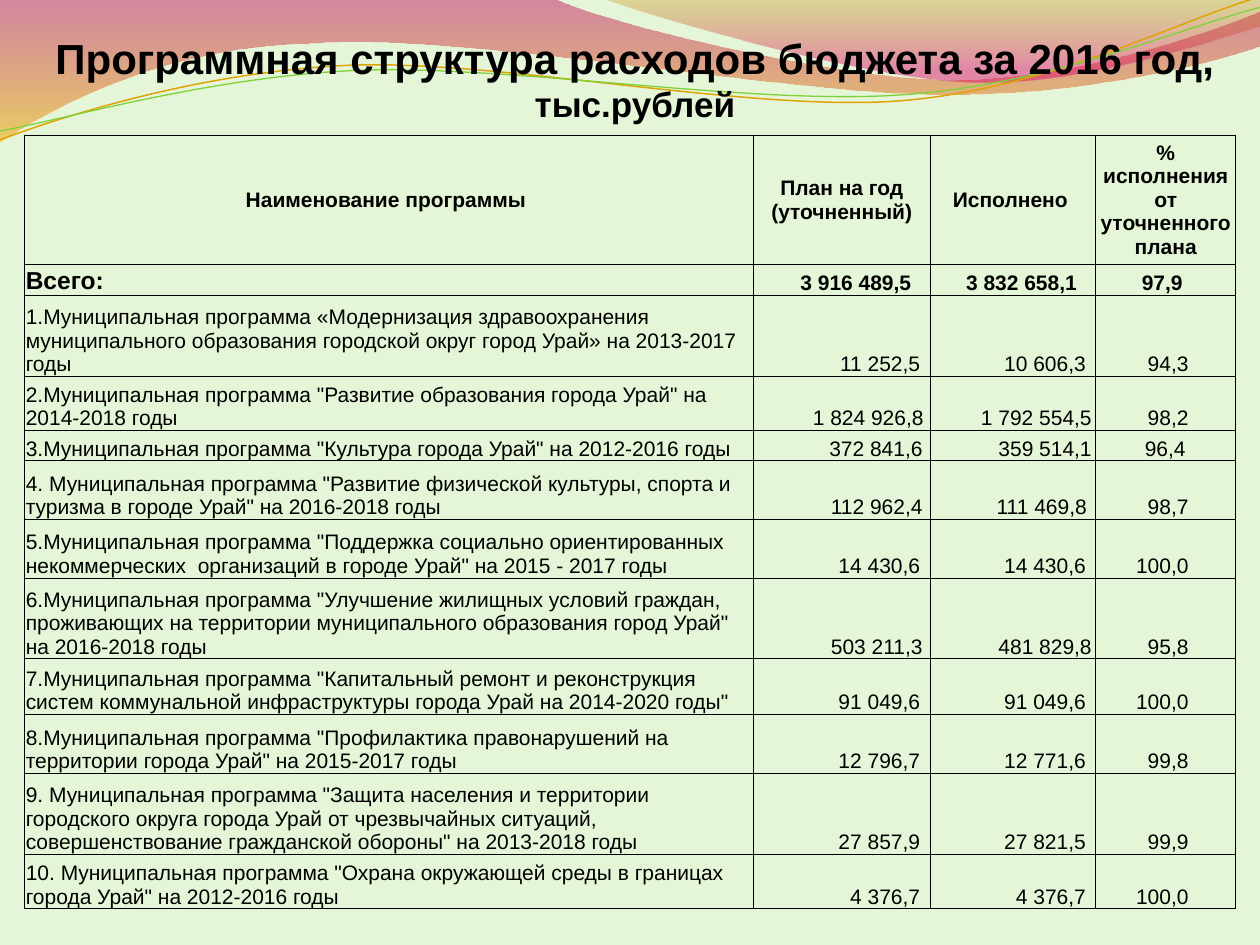
from lxml import etree
from pptx import Presentation
from pptx import util as u
from pptx.dml.color import RGBColor
from pptx.enum import text as t
from pptx.oxml import ns

BACK = RGBColor(0xE5, 0xF6, 0xD8)
BLACK = RGBColor(0, 0, 0)
CRIMSON = RGBColor(0xBD, 0x00, 0x59)
AMBER = RGBColor(0xF0, 0xAB, 0x00)
OCHRE = RGBColor(0xC3, 0x8B, 0x00)
PINK = RGBColor(0xE1, 0x00, 0x6B)
ORANGE = RGBColor(0xE0, 0xA2, 0x09)
GREEN = RGBColor(0x7F, 0xD1, 0x3B)


def write(para, text, size=12, bold=False, align=t.PP_ALIGN.LEFT):
    para.alignment = align
    span = para.add_run()
    span.text = text
    span.font.name = "Arial"
    span.font.size = u.Pt(size)
    span.font.bold = bold
    span.font.color.rgb = BLACK


def draw_wave(page, start, segments, close):
    """Segments hold one point for a straight line, three for a Bezier curve."""
    points = [(u.Cm(x), u.Cm(y)) for segment in segments for x, y in segment]
    builder = page.shapes.build_freeform(u.Cm(start[0]), u.Cm(start[1]), scale=1.0)
    builder.add_line_segments(points, close=close)
    wave = builder.convert_to_shape()
    wave.shadow.inherit = False
    # Join each three straight steps of a curve into one Bezier step
    steps = iter(wave._element.spPr.findall(".//" + ns.qn("a:lnTo")))
    for segment in segments:
        parts = [next(steps) for _ in segment]
        if len(parts) == 3:
            curve = etree.Element(ns.qn("a:cubicBezTo"))
            parts[0].addprevious(curve)
            for part in parts:
                curve.append(part[0])
                part.getparent().remove(part)
    return wave


deck = Presentation()
deck.slide_width, deck.slide_height = u.Cm(25.4), u.Cm(19.05)
page = deck.slides.add_slide(deck.slide_layouts[6])
page.background.fill.solid()
page.background.fill.fore_color.rgb = BACK

# Translucent bands: start, segments, (colour, position, opacity) of both stops
bands = [
    ((0, 0),
     [[(11.18, -0.03)],
      [(12.09, 0.43), (16.87, 1.6), (19.25, 1.6)],
      [(21.67, 1.6), (24.33, 0.66), (25.4, 0.23)],
      [(25.43, 0.91)],
      [(24.97, 1.12), (22.1, 1.93), (18.95, 1.9)],
      [(15.8, 1.9), (9.7, 0.71), (6.53, 0.86)],
      [(3.28, 0.91), (1.17, 2.11), (-0.03, 2.87)]],
     [(CRIMSON, 0, 45), (AMBER, 1, 55)]),
    ((12.17, -0.03),
     [[(12.93, 0.28), (17.32, 1.57), (19.53, 1.65)],
      [(21.74, 1.75), (24.41, 0.81), (25.4, 0.53)],
      [(25.4, 0)]],
     [(OCHRE, 0, 30), (PINK, 0.8, 45)]),
]
for start, segments, stops in bands:
    band = draw_wave(page, start, segments, close=True)
    band.line.fill.background()
    band.fill.gradient()
    band.fill.gradient_angle = 270
    for stop, (colour, position, opacity) in zip(band.fill.gradient_stops, stops):
        stop.color.rgb = colour
        stop.position = position
    tints = band._element.spPr.findall(".//" + ns.qn("a:srgbClr"))
    for tint, (colour, position, opacity) in zip(tints, stops):
        etree.SubElement(tint, ns.qn("a:alpha"), val=str(opacity * 1000))

# Thin wavy lines, slightly turned
lines = [
    ((-0.05, 2.22),
     [[(1.19, 1.82), (4.02, 1.04), (7.06, 1.05)],
      [(10.05, 1.07), (15.02, 2.37), (18.08, 2.29)],
      [(21.13, 2.2), (23.87, 0.91), (25.41, 0.55)]],
     ORANGE, 0.85),
    ((-0.04, 2.04),
     [[(1.16, 1.9), (4.18, 1.15), (7.2, 1.16)],
      [(10.25, 1.18), (15.13, 2.25), (18.18, 2.17)],
      [(21.21, 2.1), (23.93, 1.06), (25.45, 0.75)]],
     GREEN, 0.75),
]
for start, segments, colour, width in lines:
    line = draw_wave(page, start, segments, close=False)
    line.rotation = 357.3
    line.fill.background()
    line.line.color.rgb = colour
    line.line.width = u.Pt(width)

# Title
title = page.shapes.add_textbox(u.Cm(0.7), u.Cm(0.53), u.Cm(24.2), u.Cm(2.13))
title.text_frame.word_wrap = True
title.text_frame.auto_size = t.MSO_AUTO_SIZE.SHAPE_TO_FIT_TEXT
para = title.text_frame.paragraphs[0]
write(para, "Программная структура расходов бюджета за 2016 год, ",
      size=24, bold=True, align=t.PP_ALIGN.CENTER)
write(para, "тыс.рублей", size=20, bold=True, align=t.PP_ALIGN.CENTER)

# Table: row height, then the four cells
rows = [
    (2.6, "Наименование программы ", "План на год (уточненный)", "Исполнено ",
     "% исполнения от уточненного плана"),
    (0.63, "Всего:", "3 916 489,5", "3 832 658,1", "97,9"),
    (1.63, "1.Муниципальная программа «Модернизация здравоохранения муниципального "
           "образования городской округ город Урай» на 2013-2017 годы",
     "11 252,5", "10 606,3", "94,3"),
    (1.09, '2.Муниципальная программа "Развитие образования города Урай" на 2014-2018 годы',
     "1 824 926,8", "1 792 554,5", "98,2"),
    (0.62, '3.Муниципальная программа "Культура города Урай" на 2012-2016 годы',
     "372 841,6", "359 514,1", "96,4"),
    (1.18, '4. Муниципальная программа "Развитие физической культуры, спорта и туризма '
           'в городе Урай" на 2016-2018 годы',
     "112 962,4", "111 469,8", "98,7"),
    (1.18, '5.Муниципальная программа "Поддержка социально ориентированных некоммерческих  '
           'организаций в городе Урай" на 2015 - 2017 годы',
     "14 430,6", "14 430,6", "100,0"),
    (1.63, '6.Муниципальная программа "Улучшение жилищных условий граждан, проживающих на '
           'территории муниципального образования город Урай" на 2016-2018 годы',
     "503 211,3", "481 829,8", "95,8"),
    (1.12, '7.Муниципальная программа "Капитальный ремонт и реконструкция систем '
           'коммунальной инфраструктуры города Урай на 2014-2020 годы"',
     "91 049,6", "91 049,6", "100,0"),
    (1.19, '8.Муниципальная программа "Профилактика правонарушений на территории города '
           'Урай" на 2015-2017 годы',
     "12 796,7", "12 771,6", "99,8"),
    (1.63, '9. Муниципальная программа "Защита населения и территории городского округа '
           'города Урай от чрезвычайных ситуаций, совершенствование гражданской обороны" '
           'на 2013-2018 годы',
     "27 857,9", "27 821,5", "99,9"),
    (1.1, '10. Муниципальная программа "Охрана окружающей среды в границах города Урай" '
          'на 2012-2016 годы',
     "4 376,7", "4 376,7", "100,0"),
]
widths = [14.68, 3.58, 3.33, 2.82]
inset = 0.02
# Right insets of the figures by column, and the cells that differ
figure_insets = [inset, 0.21, 0.2, 0.95]
special_insets = {
    (1, 1): 0.39, (1, 2): 0.38, (1, 3): 1.07,
    (3, 1): 0.14, (3, 2): 0.08,
    (4, 1): 0.16, (4, 2): 0.08, (4, 3): 1.01,
    (5, 1): 0.16, (5, 2): 0.18,
    (7, 1): 0.16, (7, 2): 0.08,
}

table = page.shapes.add_table(
    len(rows), len(widths), u.Cm(0.5), u.Cm(2.72),
    u.Cm(sum(widths)), u.Cm(sum(row[0] for row in rows))).table
for column, width in zip(table.columns, widths):
    column.width = u.Cm(width)

for r, (height, *texts) in enumerate(rows):
    table.rows[r].height = u.Cm(height)
    for c, text in enumerate(texts):
        cell = table.cell(r, c)
        cell.fill.solid()
        cell.fill.fore_color.rgb = BACK
        cell.margin_left = cell.margin_top = cell.margin_right = u.Cm(inset)
        cell.margin_bottom = 0
        if r == 0:
            cell.vertical_anchor = t.MSO_ANCHOR.MIDDLE
            align = t.PP_ALIGN.CENTER
        else:
            cell.vertical_anchor = t.MSO_ANCHOR.BOTTOM
            align = t.PP_ALIGN.RIGHT if c else t.PP_ALIGN.LEFT
            cell.margin_right = u.Cm(special_insets.get((r, c), figure_insets[c]))
        write(cell.text_frame.paragraphs[0], text, size=14 if (r, c) == (1, 0) else 12,
              bold=r < 2, align=align)

        # Cell borders go ahead of the fill
        properties = cell._tc.get_or_add_tcPr()
        for place, side in enumerate(("a:lnL", "a:lnR", "a:lnT", "a:lnB")):
            border = etree.Element(ns.qn(side), w=str(u.Pt(0.5)))
            ink = etree.SubElement(border, ns.qn("a:solidFill"))
            etree.SubElement(ink, ns.qn("a:srgbClr"), val=str(BLACK))
            properties.insert(place, border)

deck.save("out.pptx")
